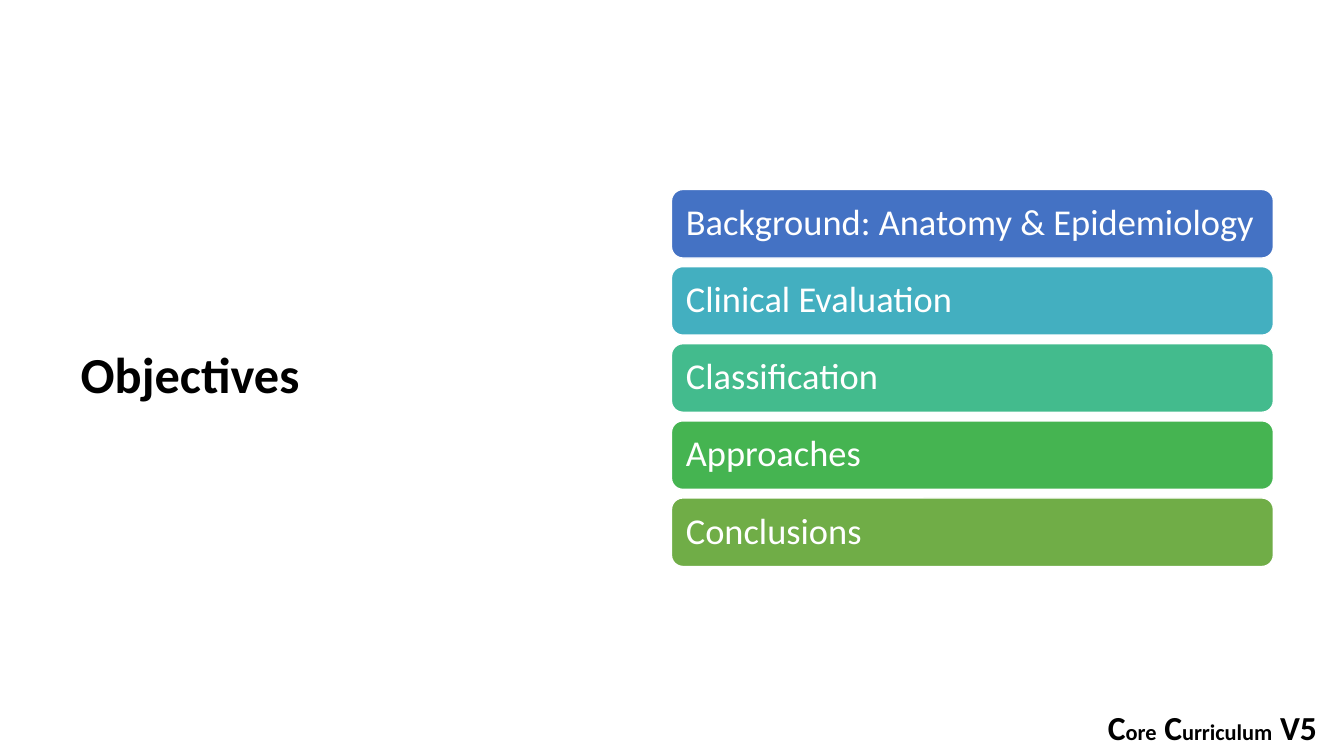
from pptx import Presentation
from pptx.dml.color import RGBColor
from pptx.enum.shapes import MSO_SHAPE as Shape
from pptx.enum.text import MSO_ANCHOR as Anchor, MSO_AUTO_SIZE as AutoSize, PP_ALIGN as Align
from pptx.util import Inches, Pt

BLACK = RGBColor(0x00, 0x00, 0x00)
WHITE = RGBColor(0xFF, 0xFF, 0xFF)
BLUE = RGBColor(0x44, 0x72, 0xC4)
CYAN = RGBColor(0x43, 0xAF, 0xC0)
TEAL = RGBColor(0x43, 0xBB, 0x8D)
GREEN = RGBColor(0x45, 0xB4, 0x51)
OLIVE = RGBColor(0x70, 0xAD, 0x47)
FONT = "Calibri"
TITLE_ONLY = 5

BAR_LEFT, BAR_TOP = 6.66, 1.88
BAR_WIDTH, BAR_HEIGHT = 5.97, 0.68
BAR_PITCH = 0.765

OBJECTIVES = [
    ("Background: Anatomy & Epidemiology", BLUE),
    ("Clinical Evaluation", CYAN),
    ("Classification", TEAL),
    ("Approaches", GREEN),
    ("Conclusions", OLIVE),
]
SERIES_NAME = [("C", 24), ("ore", 16), (" C", 24), ("urriculum", 16), (" V5", 24)]


def add_span(para, text, size, color, bold=False):
    span = para.add_run()
    span.text = text
    span.font.name = FONT
    span.font.size = Pt(size)
    span.font.bold = bold
    span.font.color.rgb = color


def place(box, left, top, width, height):
    box.left, box.top = Inches(left), Inches(top)
    box.width, box.height = Inches(width), Inches(height)


def add_series_name(page):
    box = page.shapes.add_textbox(Inches(10.89), Inches(6.96), Inches(2.35), Inches(0.5))
    box.text_frame.word_wrap = False
    box.text_frame.auto_size = AutoSize.SHAPE_TO_FIT_TEXT
    for text, size in SERIES_NAME:
        add_span(box.text_frame.paragraphs[0], text, size, BLACK, bold=True)


def set_title(page, text):
    title = page.shapes.title
    place(title, 0.7, 0.7, 5.25, 6.09)
    title.text_frame.vertical_anchor = Anchor.MIDDLE
    para = title.text_frame.paragraphs[0]
    para.alignment = Align.LEFT
    para.line_spacing = 0.9
    add_span(para, text, 36, BLACK, bold=True)


def add_bar(page, row, text, color):
    bar = page.shapes.add_shape(
        Shape.ROUNDED_RECTANGLE, Inches(BAR_LEFT), Inches(BAR_TOP + row * BAR_PITCH),
        Inches(BAR_WIDTH), Inches(BAR_HEIGHT))
    bar.shadow.inherit = False
    bar.fill.solid()
    bar.fill.fore_color.rgb = color
    bar.line.color.rgb = WHITE
    bar.line.width = Pt(1)
    frame = bar.text_frame
    frame.word_wrap = True
    frame.vertical_anchor = Anchor.MIDDLE
    frame.margin_left = frame.margin_right = Inches(0.11)
    frame.margin_top = frame.margin_bottom = Inches(0.11)
    para = frame.paragraphs[0]
    para.alignment = Align.LEFT
    para.line_spacing = 0.9
    add_span(para, text, 26, WHITE)


def main():
    deck = Presentation()
    deck.slide_width, deck.slide_height = Inches(13.33), Inches(7.5)
    page = deck.slides.add_slide(deck.slide_layouts[TITLE_ONLY])
    add_series_name(page)
    set_title(page, "Objectives")
    for row, (text, color) in enumerate(OBJECTIVES):
        add_bar(page, row, text, color)
    deck.save("out.pptx")


if __name__ == "__main__":
    main()
